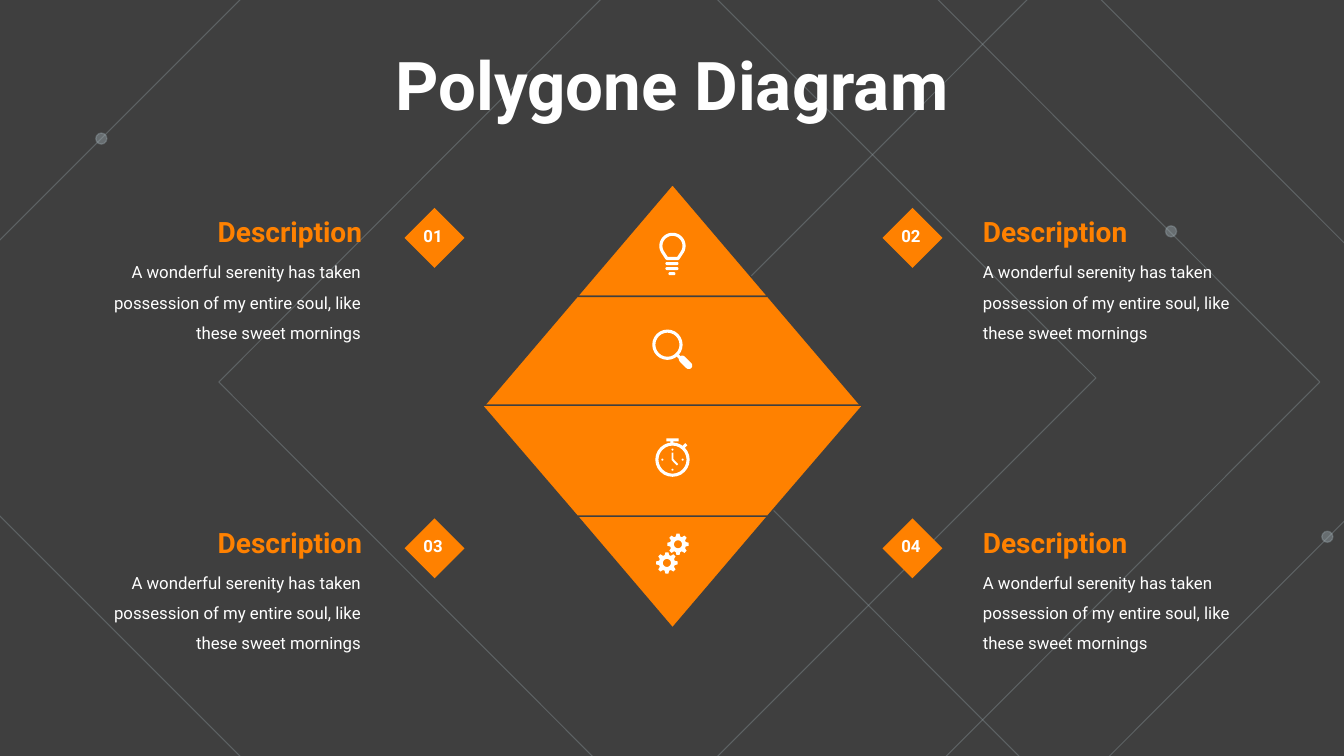
"""Build the Polygone Diagram slide."""
from dataclasses import dataclass
from math import cos, pi, radians, sin
from typing import Optional

from lxml.etree import SubElement
from pptx import Presentation
from pptx.dml.color import RGBColor
from pptx.enum.shapes import MSO_SHAPE as Preset
from pptx.enum.text import MSO_ANCHOR as Anchor, MSO_AUTO_SIZE as AutoSize, PP_ALIGN as Align
from pptx.oxml.ns import qn
from pptx.shapes.autoshape import Shape
from pptx.shapes.shapetree import SlideShapes
from pptx.text.text import TextFrame
from pptx.util import Inches, Pt

CHARCOAL = RGBColor(0x3F, 0x3F, 0x3F)
ORANGE = RGBColor(0xFF, 0x81, 0x00)
MIST = RGBColor(0xA5, 0xB4, 0xBB)
WHITE = RGBColor(0xFF, 0xFF, 0xFF)
FONT = "Roboto"
SENTENCE = "A wonderful serenity has taken possession of my entire soul, like these sweet mornings"
CENTER = 6.67
Points = list[tuple[float, float]]


@dataclass(frozen=True)
class Paint:
    fill: Optional[RGBColor] = None
    line: Optional[RGBColor] = None
    width: float = 1
    opacity: tuple[int, ...] = ()


@dataclass(frozen=True)
class Part:
    preset: Preset
    x: float
    y: float
    width: float
    height: float
    paint: Paint
    turn: float = 0


@dataclass(frozen=True)
class Tier:
    top: float
    bottom: float
    half_top: float
    half_bottom: float


@dataclass(frozen=True)
class Topic:
    number: str
    top: float
    marker_left: float
    heading_left: float
    text_left: float
    align: Align


SOLID_WHITE = Paint(fill=WHITE)
STROKE_WHITE = Paint(line=WHITE, width=2.2)
RHOMBUS = Paint(line=MIST, width=0.75, opacity=(29,))
DOT = Paint(fill=MIST, line=MIST, opacity=(40, 29))

BACKDROP = [
    Part(Preset.DIAMOND, 6.4, -0.37, 8.31, 8.32, RHOMBUS),
    Part(Preset.DIAMOND, 2.17, -1.68, 10.92, 10.94, RHOMBUS),
    Part(Preset.DIAMOND, -1.37, -2.37, 12.24, 12.24, RHOMBUS),
] + [Part(Preset.OVAL, x, y, 0.11, 0.11, DOT)
     for x, y in [(11.56, 2.24), (13.11, 5.27), (0.95, 1.32)]]

TIERS = [
    Tier(1.83, 2.94, 0, 0.945),
    Tier(2.94, 4.05, 0.945, 1.89),
    Tier(5.12, 6.23, 0.945, 0),
    Tier(4.02, 5.12, 1.89, 0.945),
]

TOPICS = [
    Topic(f"{2 * row + column + 1:02}", 2.08 + 3.08 * row, *sides)
    for row in range(2)
    for column, sides in enumerate([(4.1, 1.6, 0.78, Align.RIGHT), (8.84, 9.65, 9.65, Align.LEFT)])
]

BULB_BASE = [
    Part(Preset.ROUNDED_RECTANGLE, 6.6, 2.6, 0.13, 0.03, SOLID_WHITE),
    Part(Preset.ROUNDED_RECTANGLE, 6.6, 2.65, 0.13, 0.03, SOLID_WHITE),
    Part(Preset.ROUNDED_RECTANGLE, 6.63, 2.7, 0.07, 0.03, SOLID_WHITE),
]
MAGNIFIER = [
    Part(Preset.OVAL, 6.485, 3.285, 0.27, 0.27, STROKE_WHITE),
    Part(Preset.RECTANGLE, 6.69, 3.52, 0.08, 0.03, SOLID_WHITE, 45),
    Part(Preset.ROUNDED_RECTANGLE, 6.72, 3.56, 0.16, 0.07, SOLID_WHITE, 45),
]
STOPWATCH = [
    Part(Preset.OVAL, 6.515, 4.405, 0.31, 0.31, STROKE_WHITE),
    Part(Preset.RECTANGLE, 6.61, 4.35, 0.12, 0.03, SOLID_WHITE),
    Part(Preset.RECTANGLE, 6.65, 4.37, 0.03, 0.04, SOLID_WHITE),
    Part(Preset.RECTANGLE, 6.765, 4.41, 0.05, 0.03, SOLID_WHITE, -45),
] + [Part(Preset.OVAL, x, y, 0.02, 0.02, SOLID_WHITE)
     for x, y in [(6.66, 4.45), (6.66, 4.65), (6.76, 4.55), (6.56, 4.55)]]


def arc(x: float, y: float, radius: float, start: float, end: float) -> Points:
    steps = 24
    angles = [radians(start + (end - start) * step / steps) for step in range(steps + 1)]
    return [(x + radius * cos(angle), y + radius * sin(angle)) for angle in angles]


def gear(x: float, y: float) -> list[Points]:
    teeth = 8
    rim = []
    for tooth in range(teeth):
        for offset, radius in [(-0.28, 0.08), (-0.14, 0.107), (0.14, 0.107), (0.28, 0.08)]:
            angle = 2 * pi * tooth / teeth + offset
            rim.append((x + radius * cos(angle), y + radius * sin(angle)))
    return [rim, arc(x, y, 0.04, 360, 0)]


def apply_paint(shape: Shape, paint: Paint) -> None:
    shape.shadow.inherit = False
    if paint.fill is None:
        shape.fill.background()
    else:
        shape.fill.solid()
        shape.fill.fore_color.rgb = paint.fill
    if paint.line is None:
        shape.line.fill.background()
    else:
        shape.line.color.rgb = paint.line
        shape.line.width = Pt(paint.width)
    colors = list(shape.element.spPr.iter(qn("a:srgbClr")))
    for color, percent in zip(colors, paint.opacity):
        SubElement(color, qn("a:alpha")).set("val", str(percent * 1000))


def draw_part(shapes: SlideShapes, part: Part) -> None:
    box = map(Inches, (part.x, part.y, part.width, part.height))
    shape = shapes.add_shape(part.preset, *box)
    if part.preset == Preset.ROUNDED_RECTANGLE:
        shape.adjustments[0] = 0.5
    shape.rotation = part.turn
    apply_paint(shape, part.paint)


def draw_outline(shapes: SlideShapes, contours: list[Points], paint: Paint, close: bool = True) -> None:
    scaled = [[(Inches(x), Inches(y)) for x, y in contour] for contour in contours]
    builder = shapes.build_freeform(*scaled[0][0])
    builder.add_line_segments(scaled[0][1:], close=close)
    for contour in scaled[1:]:
        builder.move_to(*contour[0])
        builder.add_line_segments(contour[1:], close=close)
    apply_paint(builder.convert_to_shape(), paint)


def write(frame: TextFrame, text: str, size: float, color: RGBColor, bold: bool, align: Align) -> None:
    frame.word_wrap = True
    paragraph = frame.paragraphs[0]
    paragraph.alignment = align
    run = paragraph.add_run()
    run.text = text
    run.font.name, run.font.size, run.font.bold = FONT, Pt(size), bold
    run.font.color.rgb = color


def add_label(shapes: SlideShapes, box: tuple[float, float, float, float], text: str, size: float,
              color: RGBColor, bold: bool, align: Align, spacing: float = 1.0) -> None:
    frame = shapes.add_textbox(*map(Inches, box)).text_frame
    write(frame, text, size, color, bold, align)
    frame.paragraphs[0].line_spacing = spacing


def draw_topic(shapes: SlideShapes, topic: Topic) -> None:
    left, top = topic.marker_left, topic.top
    add_label(shapes, (topic.text_left, top + 0.37, 2.9, 0.98), SENTENCE, 12, WHITE, False, topic.align, 1.5)
    add_label(shapes, (topic.heading_left, top, 2.09, 0.44), "Description", 20, ORANGE, True, topic.align)
    draw_part(shapes, Part(Preset.RECTANGLE, left, top + 0.07, 0.42, 0.42, Paint(fill=ORANGE), 45))
    add_label(shapes, (left - 0.03, top + 0.11, 0.45, 0.3), topic.number, 12, WHITE, True, Align.CENTER)


def draw_tier(shapes: SlideShapes, tier: Tier) -> None:
    corners = [(CENTER - tier.half_bottom, tier.bottom), (CENTER - tier.half_top, tier.top),
               (CENTER + tier.half_top, tier.top), (CENTER + tier.half_bottom, tier.bottom)]
    draw_outline(shapes, [corners], Paint(fill=ORANGE, line=CHARCOAL))


def draw_icons(shapes: SlideShapes) -> None:
    bulb = [(6.615, 2.565), *arc(CENTER, 2.44, 0.115, 150, 390), (6.725, 2.565)]
    draw_outline(shapes, [bulb], STROKE_WHITE)
    for part in BULB_BASE + MAGNIFIER + STOPWATCH:
        draw_part(shapes, part)
    hands = [(CENTER, 4.49), (CENTER, 4.56), (6.72, 4.61)]
    draw_outline(shapes, [hands], Paint(line=WHITE, width=1.4), close=False)
    for x, y in [(6.725, 5.4), (6.615, 5.585)]:
        draw_outline(shapes, gear(x, y), SOLID_WHITE)


def main() -> None:
    deck = Presentation()
    deck.slide_width, deck.slide_height = Inches(13.33), Inches(7.5)
    slide = deck.slides.add_slide(deck.slide_layouts[5])
    slide.background.fill.solid()
    slide.background.fill.fore_color.rgb = CHARCOAL
    shapes = slide.shapes
    for part in BACKDROP:
        draw_part(shapes, part)
    heading = shapes.title
    heading.element.getparent().append(heading.element)
    heading.left, heading.top, heading.width, heading.height = map(Inches, (1.81, 0.28, 9.71, 1.1))
    heading.text_frame.auto_size = AutoSize.NONE
    heading.text_frame.vertical_anchor = Anchor.MIDDLE
    write(heading.text_frame, "Polygone Diagram", 48, WHITE, True, Align.CENTER)
    heading.text_frame.paragraphs[0].space_before = Pt(10)
    for topic in TOPICS:
        draw_topic(shapes, topic)
    for tier in TIERS:
        draw_tier(shapes, tier)
    draw_icons(shapes)
    deck.save("out.pptx")


if __name__ == "__main__":
    main()
